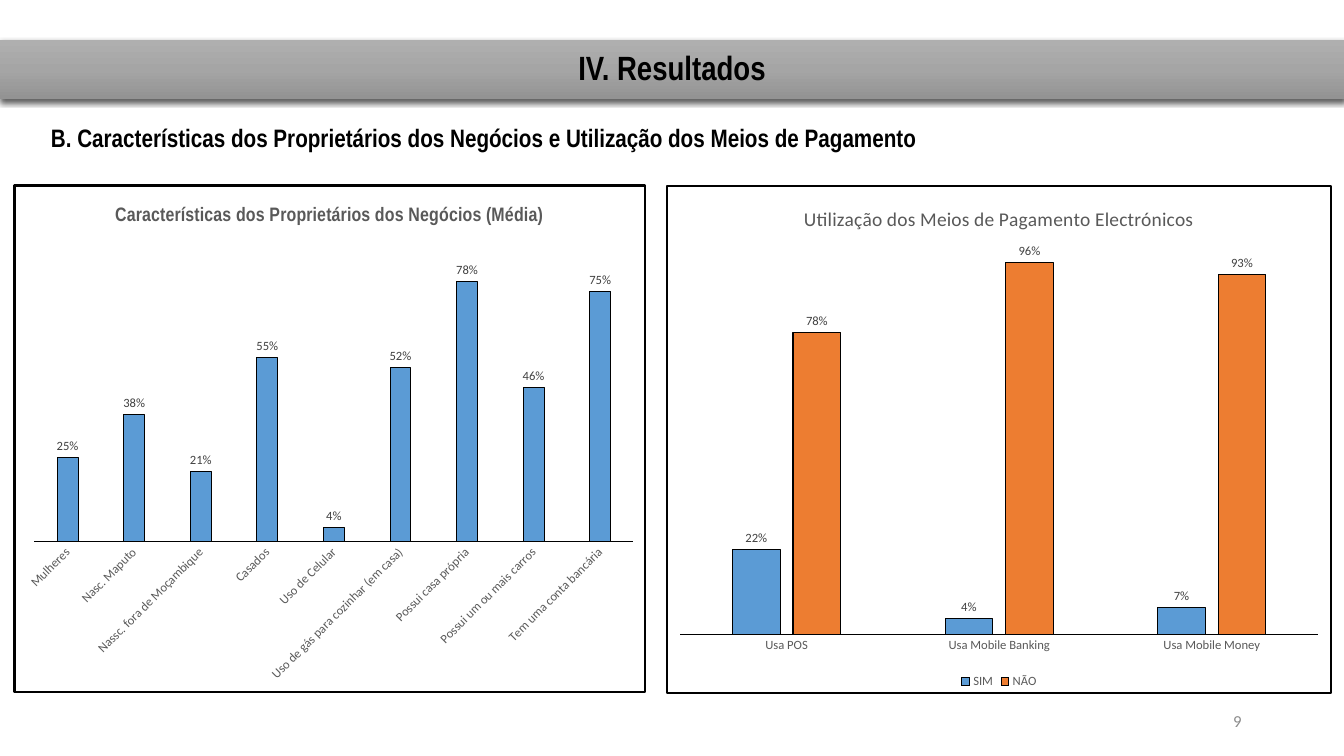
"""Builds the results slide on business owners and their means of payment."""
import dataclasses

import pptx
import pptx.chart.data
import pptx.dml.color
import pptx.enum.chart
import pptx.enum.text
import pptx.oxml
import pptx.oxml.ns
import pptx.util

WIDTH, HEIGHT = pptx.util.Inches(13.33), pptx.util.Inches(7.5)
COLUMNS = ROWS = 100
NARROW, REGULAR = "Arial Narrow", "Calibri"
BLACK, GREY, DARK, WHITE = "000000", "595959", "404040", "FFFFFF"
SERIES_COLOURS = ("5B9BD5", "ED7D31")
ALIGN = pptx.enum.text.PP_ALIGN


@dataclasses.dataclass
class Frame:
    """Area in grid columns and rows."""
    column: float
    row: float
    columns: float
    rows: float

    def lengths(self) -> tuple[int, int, int, int]:
        """Return left, top, width and height on the slide."""
        return (round(WIDTH * self.column / COLUMNS), round(HEIGHT * self.row / ROWS),
                round(WIDTH * self.columns / COLUMNS), round(HEIGHT * self.rows / ROWS))


@dataclasses.dataclass
class TextStyle:
    """Look of a run of text."""
    size: float
    colour: str = BLACK
    face: str = REGULAR
    bold: bool = False


@dataclasses.dataclass
class Panel:
    """Column chart with its frame, plot area percentages and data."""
    frame: Frame
    plot: tuple[float, float, float, float]
    heading: str
    heading_style: TextStyle
    categories: list[str]
    series: dict[str, list[float]]
    percent_format: str
    maximum: float
    border: float
    label_angle: int = 0
    legend: bool = False


PANELS = [
    Panel(Frame(49.55, 24.48, 49.59, 67.33), (2, 12.05, 96, 76.4),
          "Utilização dos Meios de Pagamento Electrónicos", TextStyle(14, GREY),
          ["Usa POS", "Usa Mobile Banking", "Usa Mobile Money"],
          {"SIM": [0.22, 0.04, 0.07], "NÃO": [0.78, 0.96, 0.93]},
          "0%", 1, 1.5, legend=True),
    Panel(Frame(0.98, 24.4, 47.11, 67.33), (3.16, 11, 95, 59.2),
          "Características dos Proprietários dos Negócios (Média)",
          TextStyle(14, GREY, NARROW, True),
          ["Mulheres", "Nasc. Maputo", "Nassc. fora de Moçambique", "Casados",
           "Uso de Celular", "Uso de gás para cozinhar (em casa)",
           "Possui casa própria", "Possui um ou mais carros",
           "Tem uma conta bancária"],
          {"Series 1": [25, 38, 21, 55, 4, 52, 78, 46, 75]},
          '0"%"', 90, 1.75, label_angle=-45),
]


def colour(value: str) -> pptx.dml.color.RGBColor:
    """Turn a hex string into a colour."""
    return pptx.dml.color.RGBColor.from_string(value)


def xml(tag: str, content: str):
    """Parse an element in the drawing and chart namespaces."""
    spaces = pptx.oxml.ns.nsdecls("a", "c")
    name = tag.split()[0]
    return pptx.oxml.parse_xml(f"<{tag} {spaces}>{content}</{name}>")


def style_font(font, style: TextStyle) -> None:
    """Apply a text style to a font."""
    font.size = pptx.util.Pt(style.size)
    font.name = style.face
    font.bold = style.bold
    font.color.rgb = colour(style.colour)


def outline(line) -> None:
    """Draw a thin black line."""
    line.color.rgb = colour(BLACK)
    line.width = pptx.util.Pt(0.75)


def write(shape, text: str, style: TextStyle, align: ALIGN, middle: bool = True) -> None:
    """Put one styled paragraph in a shape."""
    shape.text_frame.text = text
    shape.text_frame.word_wrap = True
    anchors = pptx.enum.text.MSO_ANCHOR
    shape.text_frame.vertical_anchor = anchors.MIDDLE if middle else anchors.TOP
    paragraph = shape.text_frame.paragraphs[0]
    paragraph.alignment = align
    style_font(paragraph.runs[0].font, style)


def draw_banner(slide, text: str) -> None:
    """Format the title as a shaded band across the slide."""
    banner = slide.shapes.title
    banner.left, banner.top, banner.width, banner.height = Frame(0, 5.33, 100, 7.73).lengths()
    write(banner, text, TextStyle(24, BLACK, NARROW, True), ALIGN.CENTER)
    banner.text_frame.paragraphs[0].line_spacing = 0.9
    stops = "".join(f'<a:gs pos="{share * 1000}"><a:srgbClr val="{shade}"/></a:gs>'
                    for share, shade in ((0, "AFAFAF"), (50, "A5A5A5"), (100, "939393")))
    properties = banner._element.spPr
    properties.append(xml('a:prstGeom prst="rect"', "<a:avLst/>"))
    properties.append(xml("a:gradFill", f'<a:gsLst>{stops}</a:gsLst><a:lin ang="5400000"/>'))
    properties.append(xml("a:effectLst",
        '<a:outerShdw blurRad="57150" dist="19050" dir="5400000" algn="ctr" rotWithShape="0">'
        f'<a:srgbClr val="{BLACK}"><a:alpha val="63000"/></a:srgbClr></a:outerShdw>'))


def draw_panel(slide, panel: Panel) -> None:
    """Add a framed column chart."""
    data = pptx.chart.data.CategoryChartData()
    data.categories = panel.categories
    for name, values in panel.series.items():
        data.add_series(name, values)
    kind = pptx.enum.chart.XL_CHART_TYPE.COLUMN_CLUSTERED
    chart = slide.shapes.add_chart(kind, *panel.frame.lengths(), data).chart
    style_font(chart.font, TextStyle(10))
    chart.has_title = True
    heading = chart.chart_title.text_frame
    heading.text = panel.heading
    style_font(heading.paragraphs[0].runs[0].font, panel.heading_style)

    chart.has_legend = panel.legend
    if panel.legend:
        chart.legend.position = pptx.enum.chart.XL_LEGEND_POSITION.BOTTOM
        chart.legend.include_in_layout = False
        style_font(chart.legend.font, TextStyle(9, GREY))

    category_axis, value_axis = chart.category_axis, chart.value_axis
    category_axis.major_tick_mark = pptx.enum.chart.XL_TICK_MARK.NONE
    style_font(category_axis.tick_labels.font, TextStyle(9, GREY))
    category_axis._element.txPr.bodyPr.set("rot", str(panel.label_angle * 60000))
    outline(category_axis.format.line)
    value_axis.has_major_gridlines = False
    value_axis.minimum_scale, value_axis.maximum_scale = 0, panel.maximum
    value_axis.visible = False

    bars = chart.plots[0]
    bars.gap_width, bars.overlap, bars.vary_by_categories = 219, -27, False
    for series, shade in zip(bars.series, SERIES_COLOURS):
        series.format.fill.solid()
        series.format.fill.fore_color.rgb = colour(shade)
        outline(series.format.line)
        labels = series.data_labels
        labels.show_value = True
        labels.number_format = panel.percent_format
        labels.number_format_is_linked = False
        labels.position = pptx.enum.chart.XL_LABEL_POSITION.OUTSIDE_END
        style_font(labels.font, TextStyle(9, DARK))

    area = chart._chartSpace.chart
    for old in area.plotArea.findall(pptx.oxml.ns.qn("c:layout")):
        area.plotArea.remove(old)
    edges = "".join(f'<c:{edge} val="{share / 100:.4f}"/>'
                    for edge, share in zip("xywh", panel.plot))
    area.plotArea.insert(0, xml("c:layout",
        '<c:manualLayout><c:layoutTarget val="inner"/><c:xMode val="edge"/>'
        f'<c:yMode val="edge"/>{edges}</c:manualLayout>'))
    area.addnext(xml("c:spPr",
        f'<a:solidFill><a:srgbClr val="{WHITE}"/></a:solidFill>'
        f'<a:ln w="{pptx.util.Pt(panel.border)}"><a:solidFill>'
        f'<a:srgbClr val="{BLACK}"/></a:solidFill></a:ln>'))


def main() -> None:
    """Build and save the slide."""
    deck = pptx.Presentation()
    deck.slide_width, deck.slide_height = WIDTH, HEIGHT
    slide = deck.slides.add_slide(deck.slide_layouts[5])
    draw_banner(slide, "IV. Resultados")
    page_number = slide.shapes.add_textbox(*Frame(70.62, 92.67, 22.5, 5.33).lengths())
    write(page_number, "9", TextStyle(12, "8C8C8C"), ALIGN.RIGHT)
    section = slide.shapes.add_textbox(*Frame(3.05, 15.47, 90.1, 5.33).lengths())
    write(section, "B. Características dos Proprietários dos Negócios e Utilização "
          "dos Meios de Pagamento", TextStyle(18, BLACK, NARROW, True), ALIGN.JUSTIFY, False)
    for panel in PANELS:
        draw_panel(slide, panel)
    deck.save("out.pptx")


if __name__ == "__main__":
    main()
